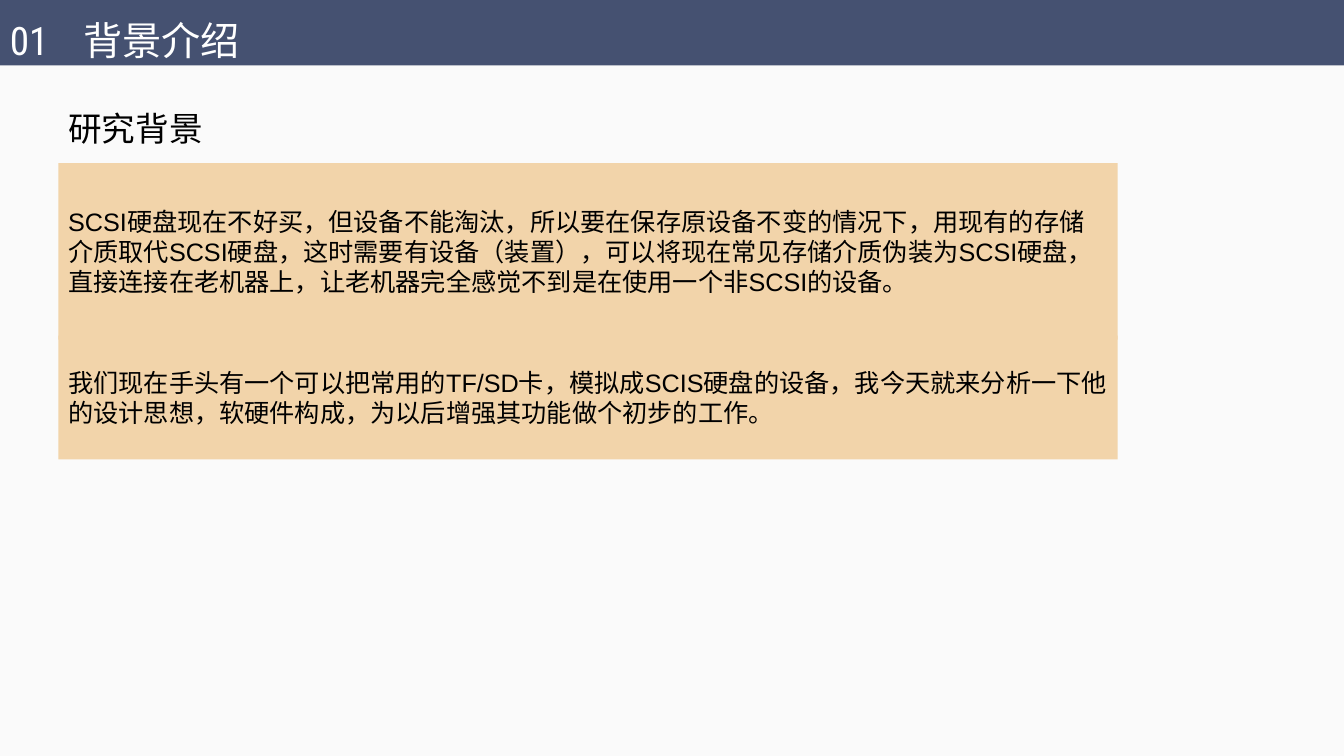
from pptx import Presentation
from pptx.dml.color import RGBColor
from pptx.enum.shapes import MSO_SHAPE
from pptx.enum.text import MSO_ANCHOR, MSO_AUTO_SIZE, PP_ALIGN
from pptx.oxml.ns import qn
from pptx.util import Cm, Pt
from lxml import etree

RECTANGLE = MSO_SHAPE.RECTANGLE
MIDDLE = MSO_ANCHOR.MIDDLE
TOP = MSO_ANCHOR.TOP
LEFT = PP_ALIGN.LEFT
GROW = MSO_AUTO_SIZE.SHAPE_TO_FIT_TEXT

SLIDE_WIDTH = 33.87
SLIDE_HEIGHT = 19.05
HEADER_HEIGHT = 1.65
CONTENT_LEFT = 1.47
PANEL_WIDTH = 26.7

BACKGROUND_PANELS = [
    (4.11, 4.45, "SCSI硬盘现在不好买，但设备不能淘汰，所以要在保存原设备不变的情况下，"
                 "用现有的存储介质取代SCSI硬盘，这时需要有设备（装置），"
                 "可以将现在常见存储介质伪装为SCSI硬盘，直接连接在老机器上，"
                 "让老机器完全感觉不到是在使用一个非SCSI的设备。"),
    (8.46, 3.12, "我们现在手头有一个可以把常用的TF/SD卡，模拟成SCIS硬盘的设备，"
                 "我今天就来分析一下他的设计思想，软硬件构成，"
                 "为以后增强其功能做个初步的工作。"),
]


def color(value):
    return RGBColor.from_string(value)


def set_background(slide, value):
    fill = slide.background.fill
    fill.solid()
    fill.fore_color.rgb = color(value)


def write_text(shape, text, size=18, font="Arial", value="000000", anchor=TOP):
    frame = shape.text_frame
    frame.word_wrap = True
    frame.vertical_anchor = anchor
    paragraph = frame.paragraphs[0]
    paragraph.alignment = LEFT
    run = paragraph.add_run()
    run.text = text
    run.font.size = Pt(size)
    run.font.name = font
    run.font.color.rgb = color(value)
    return paragraph


def add_rectangle(slide, left, top, width, height, value):
    shape = slide.shapes.add_shape(RECTANGLE, Cm(left), Cm(top), Cm(width), Cm(height))
    shape.shadow.inherit = False
    shape.fill.solid()
    shape.fill.fore_color.rgb = color(value)
    shape.line.fill.background()
    return shape


def add_text_box(slide, left, top, width, height, text, **text_format):
    box = slide.shapes.add_textbox(Cm(left), Cm(top), Cm(width), Cm(height))
    return box, write_text(box, text, **text_format)


def add_tab_stop(paragraph, position):
    properties = paragraph._p.get_or_add_pPr()
    tab_list = etree.SubElement(properties, qn("a:tabLst"))
    etree.SubElement(tab_list, qn("a:tab"), pos=str(Cm(position)), algn="l")


def main():
    presentation = Presentation()
    presentation.slide_width = Cm(SLIDE_WIDTH)
    presentation.slide_height = Cm(SLIDE_HEIGHT)
    slide = presentation.slides.add_slide(presentation.slide_layouts[6])
    set_background(slide, "FAFAFA")

    add_rectangle(slide, 0, 0, SLIDE_WIDTH, HEADER_HEIGHT, "455171")
    _, title = add_text_box(slide, 0, 0.28, 19.5, 1.37, "01\t背景介绍",
                            size=28, font="Roboto Condensed", value="FFFFFF")
    add_tab_stop(title, 1.85)

    for top, height, text in BACKGROUND_PANELS:
        panel = add_rectangle(slide, CONTENT_LEFT, top, PANEL_WIDTH, height, "F2D4AA")
        write_text(panel, text, anchor=MIDDLE)

    heading, _ = add_text_box(slide, CONTENT_LEFT, 2.59, 4.4, 1.27, "研究背景", size=24)
    heading.text_frame.auto_size = GROW

    presentation.save("out.pptx")


if __name__ == "__main__":
    main()
